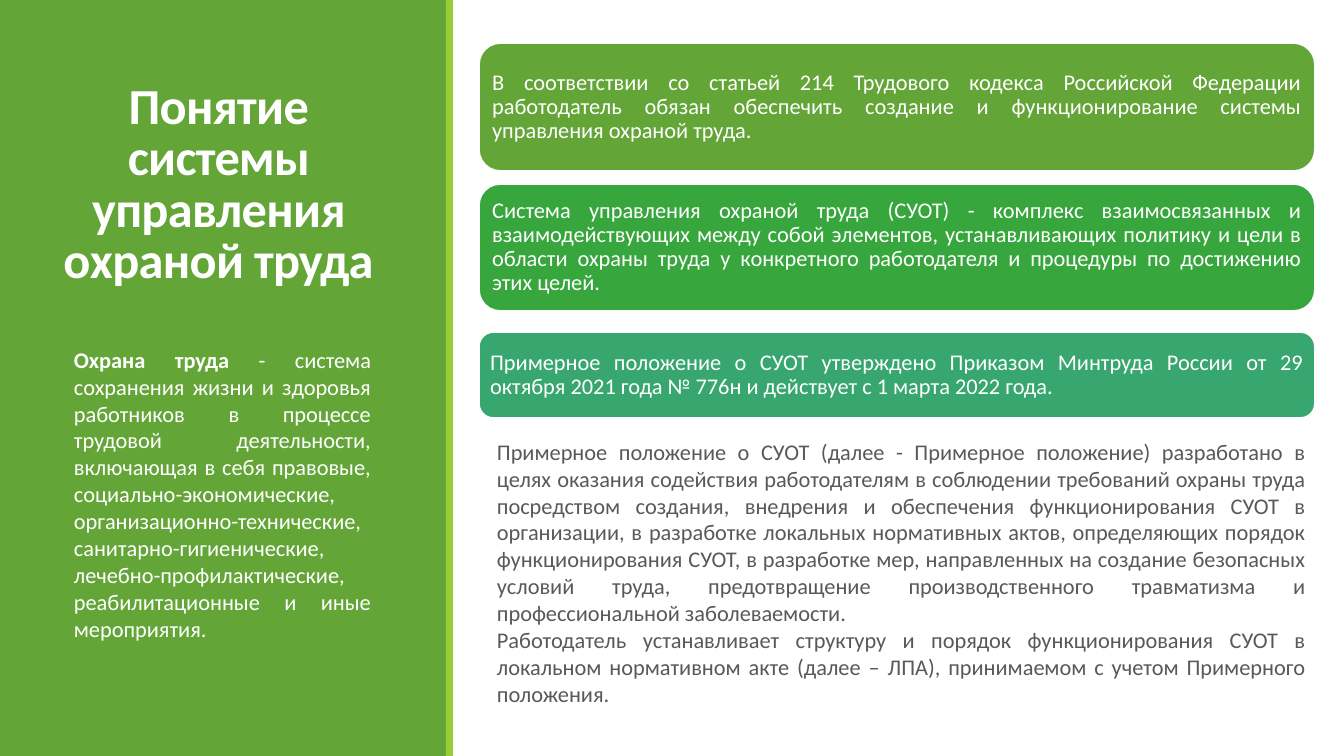
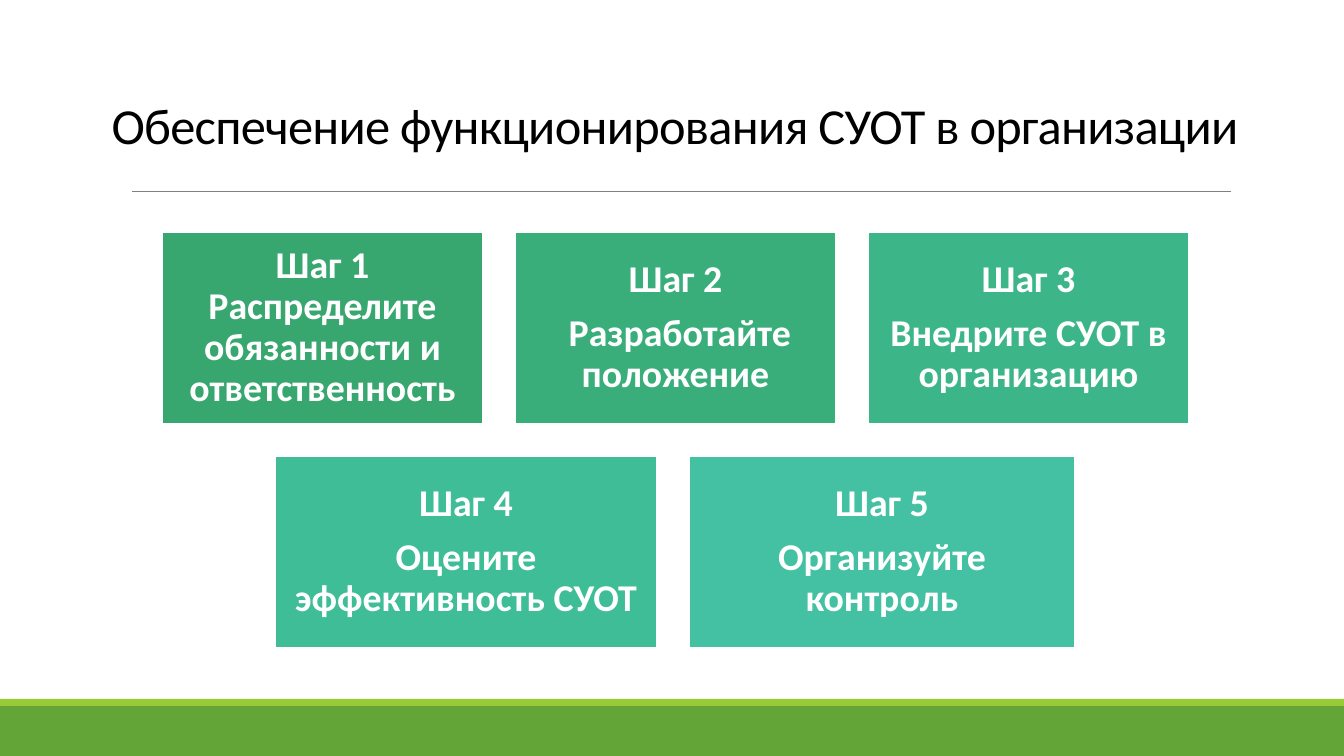
"""Builds two slides on the occupational safety management system."""
from lxml import etree
from pptx import Presentation
from pptx import util as u
from pptx.dml.color import RGBColor
from pptx.enum import shapes, text
from pptx.oxml.ns import qn

SCALE = 12192000 / 1344
WIDTH, HEIGHT = 1344, 756
FONT = "Calibri"
COLORS = {
    "white": "FFFFFF", "black": "000000", "gray": "595959", "rule": "808080",
    "green": "63A537", "lime": "99CB38", "leaf": "37A63D", "step1": "37A76F",
    "step2": "39AE7B", "step3": "3CB689", "step4": "3EBD96", "step5": "44C1A3",
}
RECT = shapes.MSO_SHAPE.RECTANGLE
ROUNDED = shapes.MSO_SHAPE.ROUNDED_RECTANGLE
CENTER, JUSTIFY = text.PP_ALIGN.CENTER, text.PP_ALIGN.JUSTIFY
TOP, MIDDLE, BOTTOM = text.MSO_ANCHOR.TOP, text.MSO_ANCHOR.MIDDLE, text.MSO_ANCHOR.BOTTOM


def add_box(slide, area, fill=None, kind=RECT, outlined=False):
    """Adds a filled shape, or a text box when there is no fill."""
    left, top, width, height = [u.Emu(round(px * SCALE)) for px in area]
    if fill is None:
        return slide.shapes.add_textbox(left, top, width, height)
    box = slide.shapes.add_shape(kind, left, top, width, height)
    box.shadow.inherit = False
    box.fill.solid()
    box.fill.fore_color.rgb = RGBColor.from_string(COLORS[fill])
    if outlined:
        box.line.color.rgb = RGBColor.from_string(COLORS["white"])
        box.line.width = u.Pt(1.25)
    else:
        box.line.fill.background()
    return box


def write(box, paragraphs, size, color, align, anchor, spacing=1.0, bold=False,
          inset=None, after=0, tracking=0):
    """Writes evenly styled paragraphs into a box."""
    frame = box.text_frame
    frame.word_wrap = True
    frame.vertical_anchor = anchor
    if inset is not None:
        margin = u.Emu(round(inset * SCALE))
        frame.margin_left = frame.margin_right = margin
        frame.margin_top = frame.margin_bottom = margin
    frame.text = "\n".join(paragraphs)
    for para in frame.paragraphs:
        para.alignment = align
        para.line_spacing = spacing
        for span in para.runs:
            span.font.name = FONT
            span.font.size = u.Pt(size)
            span.font.bold = bold
            span.font.color.rgb = RGBColor.from_string(COLORS[color])
            if tracking:
                span.font._element.set("spc", str(tracking))
    for para in frame.paragraphs[:-1]:
        para.space_after = u.Pt(after)


TITLE = {"size": 36, "align": CENTER, "spacing": 0.85, "tracking": -50}

deck = Presentation()
deck.slide_width = u.Emu(round(WIDTH * SCALE))
deck.slide_height = u.Emu(round(HEIGHT * SCALE))
blank = deck.slide_layouts[6]

page = deck.slides.add_slide(blank)
add_box(page, (0, 0, 446, HEIGHT), "green")
add_box(page, (446, 0, 7, HEIGHT), "lime")
title = add_box(page, (47, 60, 343, 252))
write(title, ["Понятие системы управления охраной труда"], color="white",
      anchor=MIDDLE, bold=True, **TITLE)

CARDS = [
    (43, 128, "green",
     "В соответствии со статьей 214 Трудового кодекса Российской Федерации "
     "работодатель обязан обеспечить создание и функционирование системы "
     "управления охраной труда."),
    (184, 127, "leaf",
     "Система управления охраной труда (СУОТ) - комплекс взаимосвязанных и "
     "взаимодействующих между собой элементов, устанавливающих политику и цели "
     "в области охраны труда у конкретного работодателя и процедуры по "
     "достижению этих целей."),
    (332, 86, "step1",
     "Примерное положение о СУОТ утверждено Приказом Минтруда России от 29 "
     "октября 2021 года № 776н и действует с 1 марта 2022 года."),
]
for top, height, fill, words in CARDS:
    card = add_box(page, (479, top, 836, height), fill, ROUNDED, outlined=True)
    write(card, [words], 16, "white", JUSTIFY, MIDDLE, spacing=0.9, inset=7)

definition = add_box(page, (64, 341, 317, 308))
write(definition, ["Охрана труда "], 16, "white", JUSTIFY, TOP, bold=True)
span = definition.text_frame.paragraphs[0].add_run()
span.text = (
    "- система сохранения жизни и здоровья работников в процессе трудовой "
    "деятельности, включающая в себя правовые, социально-экономические, "
    "организационно-технические, санитарно-гигиенические, "
    "лечебно-профилактические, реабилитационные и иные мероприятия.")
span.font.name = FONT
span.font.size = u.Pt(16)
span.font.bold = False
span.font.color.rgb = RGBColor.from_string(COLORS["white"])

details = add_box(page, (487, 433, 829, 281))
write(details, [
    "Примерное положение о СУОТ (далее - Примерное положение) разработано в "
    "целях оказания содействия работодателям в соблюдении требований охраны "
    "труда посредством создания, внедрения и обеспечения функционирования СУОТ "
    "в организации, в разработке локальных нормативных актов, определяющих "
    "порядок функционирования СУОТ, в разработке мер, направленных на создание "
    "безопасных условий труда, предотвращение производственного травматизма и "
    "профессиональной заболеваемости.",
    "Работодатель устанавливает структуру и порядок функционирования СУОТ в "
    "локальном нормативном акте (далее – ЛПА), принимаемом с учетом Примерного "
    "положения.",
], 16, "gray", JUSTIFY, TOP)

page = deck.slides.add_slide(blank)
add_box(page, (0, 706, WIDTH, 50), "green")
add_box(page, (0, 699, WIDTH, 7), "lime")
start, end, level = [u.Emu(round(px * SCALE)) for px in (132, 1231, 191)]
rule = page.shapes.add_connector(shapes.MSO_CONNECTOR.STRAIGHT, start, level, end, level)
rule.line.color.rgb = RGBColor.from_string(COLORS["rule"])
rule.line.width = u.Pt(0.5)
etree.SubElement(rule._element.spPr, qn("a:effectLst"))
title = add_box(page, (25, 0, 1300, 160))
write(title, ["Обеспечение функционирования СУОТ в организации"], color="black",
      anchor=BOTTOM, **TITLE)

STEP_ROWS = [
    [(321, "step1", ["Шаг 1 Распределите обязанности и ответственность"]),
     (321, "step2", ["Шаг 2", " Разработайте положение"]),
     (321, "step3", ["Шаг 3", "Внедрите СУОТ в организацию"])],
    [(382, "step4", ["Шаг 4", "Оцените эффективность СУОТ"]),
     (386, "step5", ["Шаг 5", "Организуйте контроль"])],
]
GAP, STEP_HEIGHT, ROWS_TOP, ROWS_CENTER = 32, 192, 232, 675
for index, row in enumerate(STEP_ROWS):
    total = sum(width for width, _, _ in row) + GAP * (len(row) - 1)
    left = ROWS_CENTER - total // 2
    top = ROWS_TOP + index * (STEP_HEIGHT + GAP)
    for width, fill, words in row:
        step = add_box(page, (left, top, width, STEP_HEIGHT), fill, outlined=True)
        write(step, words, 27, "white", CENTER, MIDDLE, spacing=0.9, bold=True,
              inset=11, after=9.45)
        left += width + GAP

deck.save("out.pptx")
